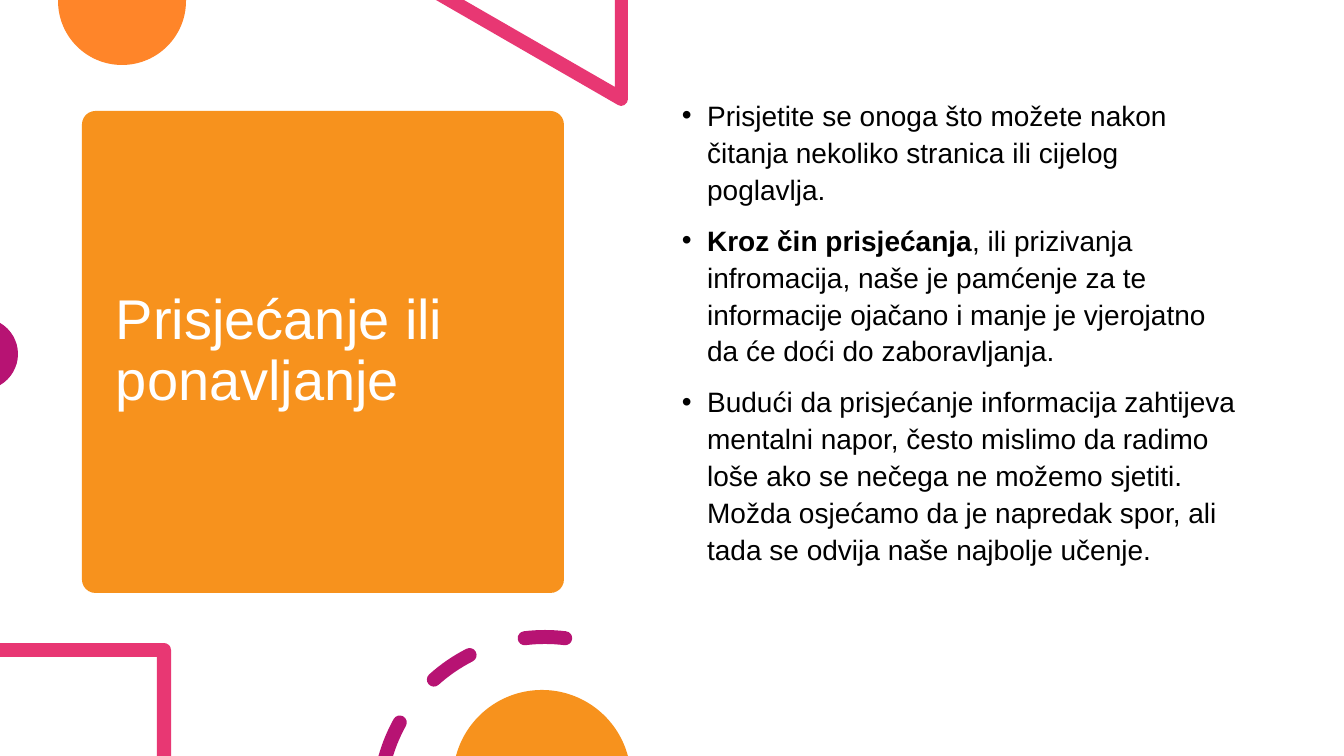
"""Builds a slide on recalling and repeating, framed by bright geometric shapes."""
from math import cos, radians, sin, tan

from lxml import etree
from pptx import Presentation
from pptx import util as u
from pptx.dml.color import RGBColor
from pptx.enum import shapes, text
from pptx.oxml.ns import qn

ORANGE = RGBColor(0xF7, 0x92, 0x1D)
BRIGHT_ORANGE = RGBColor(0xFF, 0x85, 0x29)
PINK = RGBColor(0xE8, 0x37, 0x73)
PURPLE = RGBColor(0xB7, 0x13, 0x73)
WHITE = RGBColor(0xFF, 0xFF, 0xFF)
BLACK = RGBColor(0, 0, 0)
FONT = "Arial"

WIDTH, HEIGHT = 1344, 756
TITLE = "Prisjećanje ili ponavljanje"
POINTS = [
    [("Prisjetite se onoga što možete nakon čitanja nekoliko stranica ili cijelog poglavlja.", False)],
    [("Kroz čin prisjećanja", True),
     (", ili prizivanja infromacija, naše je pamćenje za te informacije ojačano "
      "i manje je vjerojatno da će doći do zaboravljanja.", False)],
    [("Budući da prisjećanje informacija zahtijeva mentalni napor, često mislimo da radimo "
      "loše ako se nečega ne možemo sjetiti. Možda osjećamo da je napredak spor, "
      "ali tada se odvija naše najbolje učenje.", False)],
]
PANEL_AREA = (82, 111, 482, 482)
TITLE_AREA = (106, 122, 434, 460)
POINTS_AREA = (672, 90, 580, 539)

RING_X, RING_Y, RING_RADIUS, CAP = 545, 803, 166, 7
DASHES = [(228, 243), (263, 277)]


def px(length):
    return u.Emu(round(length * 914400 / 100.8))


def on_circle(x, y, radius, angle):
    return x + radius * cos(radians(angle)), y + radius * sin(radians(angle))


def arc(x, y, radius, start, end, pieces=1):
    """Return Bezier steps, each with two control points and an end point."""
    step = (end - start) / pieces
    pull = radius * 4 / 3 * tan(radians(step / 4))
    curves = []
    for i in range(pieces):
        a, b = start + step * i, start + step * (i + 1)
        (ax, ay), (bx, by) = (on_circle(x, y, radius, angle) for angle in (a, b))
        (adx, ady), (bdx, bdy) = (on_circle(0, 0, pull, angle + 90) for angle in (a, b))
        curves.append((ax + adx, ay + ady, bx - bdx, by - bdy, bx, by))
    return curves


def ring_side(offset, start, end):
    return arc(RING_X, RING_Y, RING_RADIUS + offset, start, end)


def ring_point(offset, angle):
    return on_circle(RING_X, RING_Y, RING_RADIUS + offset, angle)


def cap(angle, turn):
    return arc(*ring_point(0, angle), CAP, turn, turn + 180, 2)


def dash(start, end):
    return ([ring_point(CAP, start)] + ring_side(CAP, start, end) + cap(end, end)
            + ring_side(-CAP, end, start) + cap(start, start + 180))


cut_dash = ([ring_point(CAP, 195.77)] + ring_side(CAP, 195.77, 209)
            + cap(209, 209) + ring_side(-CAP, 209, 197.19))
DECORATIONS = [
    (BRIGHT_ORANGE, [[(186, 0), (186, 1)] + arc(122, 1, 64, 0, 180, 2) + [(58, 0)]]),
    (PINK, [[(628, 0), (615, 0), (615, 87), (464, 0), (436, 0), (618, 105)]
            + arc(621, 99, 7, 120, 0, 2)]),
    (PURPLE, [[on_circle(-18, 354, 36, -60)] + arc(-18, 354, 36, -60, 60, 2)]),
    (PINK, [[(0, 643), (164, 643)] + arc(164, 650, 7, -90, 0)
            + [(171, HEIGHT), (157, HEIGHT), (157, 657), (0, 657)]]),
    (PURPLE, [cut_dash] + [dash(*span) for span in DASHES]),
    (ORANGE, [[on_circle(542, 779, 89, 195)] + arc(542, 779, 89, 195, 345, 2)]),
]


def paint(shape, color):
    shape.shadow.inherit = False
    shape.fill.solid()
    shape.fill.fore_color.rgb = color
    shape.line.fill.background()


def bend_lines(shape, steps):
    for line, step in zip(list(shape._element.iter(qn("a:lnTo"))), steps):
        if len(step) == 6:
            line.clear()
            curve = etree.Element(qn("a:cubicBezTo"))
            for x, y in zip(step[::2], step[1::2]):
                etree.SubElement(curve, qn("a:pt"), x=str(px(x) - shape.left), y=str(px(y) - shape.top))
            line.getparent().replace(line, curve)


def draw_outline(slide, color, contours):
    ends = [[tuple(map(px, step[-2:])) for step in contour] for contour in contours]
    builder = slide.shapes.build_freeform(*ends[0][0])
    builder.add_line_segments(ends[0][1:], close=True)
    for contour in ends[1:]:
        builder.move_to(*contour[0])
        builder.add_line_segments(contour[1:], close=True)
    shape = builder.convert_to_shape()
    bend_lines(shape, [step for contour in contours for step in contour[1:]])
    paint(shape, color)


def text_frame(slide, area, anchor):
    frame = slide.shapes.add_textbox(*map(px, area)).text_frame
    frame.word_wrap = True
    frame.vertical_anchor = anchor
    return frame


def add_run(paragraph, words, size, color, bold=False):
    run = paragraph.add_run()
    run.text = words
    run.font.name = FONT
    run.font.size = u.Pt(size)
    run.font.bold = bold
    run.font.color.rgb = color


def add_bullet(paragraph):
    properties = paragraph._p.get_or_add_pPr()
    properties.set("marL", str(u.Inches(0.25)))
    properties.set("indent", str(-u.Inches(0.25)))
    etree.SubElement(properties, qn("a:buFont")).set("typeface", FONT)
    etree.SubElement(properties, qn("a:buChar")).set("char", "•")


def main():
    deck = Presentation()
    deck.slide_width, deck.slide_height = px(WIDTH), px(HEIGHT)
    slide = deck.slides.add_slide(deck.slide_layouts[6])

    panel = slide.shapes.add_shape(shapes.MSO_SHAPE.ROUNDED_RECTANGLE, *map(px, PANEL_AREA))
    panel.adjustments[0] = 0.028
    paint(panel, ORANGE)

    title = text_frame(slide, TITLE_AREA, text.MSO_ANCHOR.MIDDLE).paragraphs[0]
    title.line_spacing = 0.9
    add_run(title, TITLE, 40, WHITE)

    for color, contours in DECORATIONS:
        draw_outline(slide, color, contours)

    body = text_frame(slide, POINTS_AREA, text.MSO_ANCHOR.TOP)
    for i, point in enumerate(POINTS):
        paragraph = body.add_paragraph() if i else body.paragraphs[0]
        add_bullet(paragraph)
        paragraph.line_spacing = 1.1
        paragraph.space_before = u.Pt(10 if i else 0)
        for words, bold in point:
            add_run(paragraph, words, 20, BLACK, bold)

    deck.save("out.pptx")


if __name__ == "__main__":
    main()
